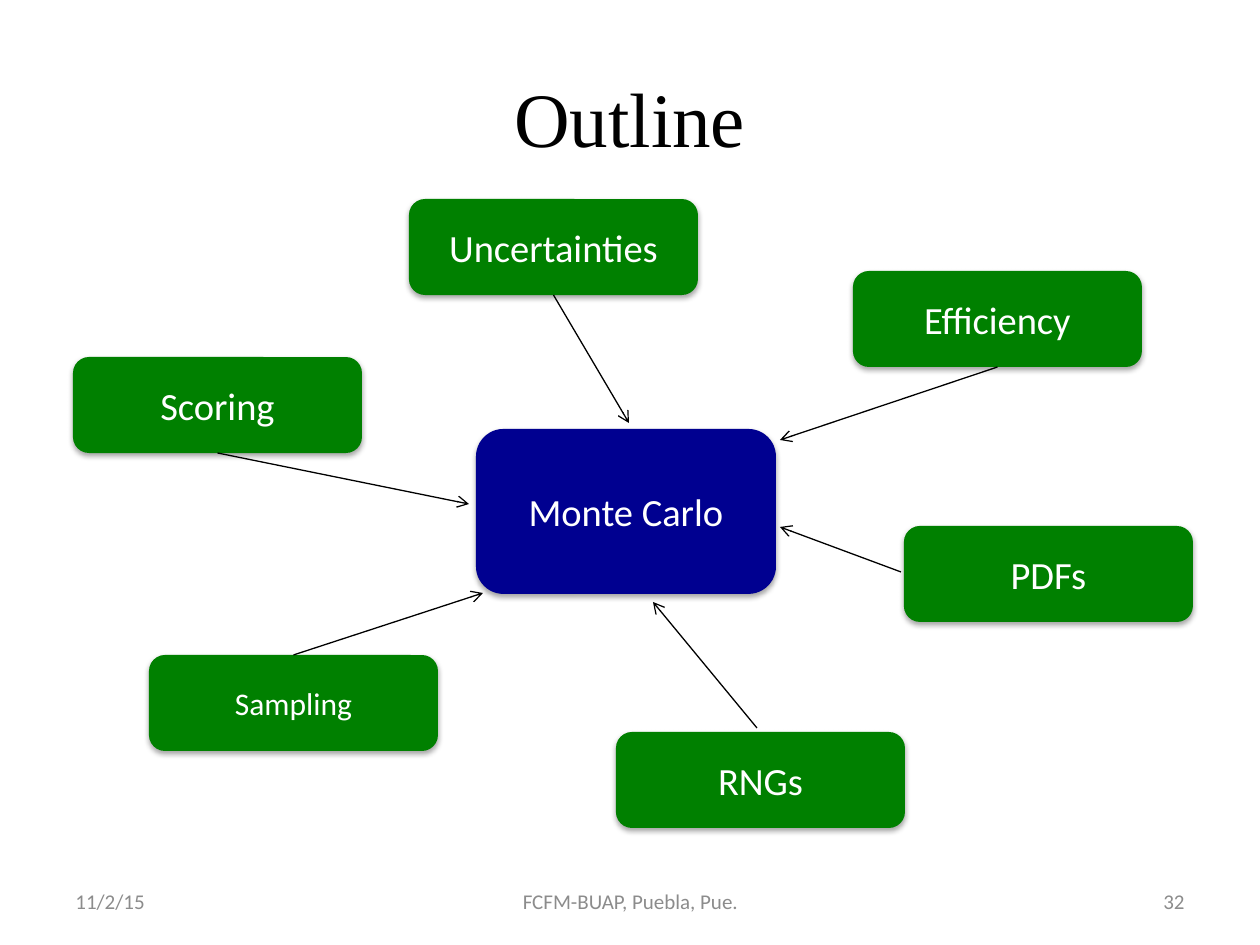
"""Builds the Monte Carlo outline slide."""
from typing import Any, NamedTuple, Optional

from lxml.etree import SubElement
from pptx import Presentation
from pptx.dml.color import RGBColor
from pptx.enum.shapes import MSO_CONNECTOR, MSO_SHAPE
from pptx.enum.text import MSO_ANCHOR, PP_ALIGN
from pptx.oxml.ns import qn
from pptx.util import Emu, Pt

SCALE = 914400 / 126
HUES = {"ink": "000000", "gray": "8C8C8C", "core": "000090",
        "node": "008000", "white": "FFFFFF"}
FRAME = {"word_wrap": True, "vertical_anchor": MSO_ANCHOR.MIDDLE}
SHADE = {"blurRad": Pt(3.1), "dist": Pt(1.8), "dir": 5400000,
         "algn": "ctr", "rotWithShape": 0}
WIDE, HIGH = 289, 96


class Label(NamedTuple):
    text: str
    box: tuple[int, int, int, int]
    size: int
    hue: str
    align: Any
    face: str = "Calibri"


class Node(NamedTuple):
    text: str
    left: int
    top: int
    tip: tuple[int, int]
    site: Optional[int] = None
    start: tuple[int, int] = (0, 0)
    size: int = 22


LABELS = [
    Label("Outline", (63, 38, 1134, 158), 44, "ink", PP_ALIGN.CENTER,
          "Times New Roman"),
    Label("11/2/15", (63, 876, 294, 50), 12, "gray", PP_ALIGN.LEFT),
    Label("FCFM-BUAP, Puebla, Pue.", (431, 876, 399, 50), 12, "gray",
          PP_ALIGN.CENTER),
    Label("32", (903, 876, 294, 50), 12, "gray", PP_ALIGN.RIGHT),
]
CORE = Label("Monte Carlo", (476, 429, 300, 165), 22, "white", PP_ALIGN.CENTER)
NODES = [
    Node("Uncertainties", 409, 199, (629, 423), 2),
    Node("Efficiency", 853, 271, (780, 440), 2),
    Node("PDFs", 904, 526, (780, 527), start=(901, 572)),
    Node("RNGs", 616, 732, (653, 602), start=(757, 728)),
    Node("Sampling", 149, 655, (483, 593), 0, size=18),
    Node("Scoring", 73, 357, (469, 504), 2),
]


def px(*nums: int) -> list[Emu]:
    return [Emu(round(num * SCALE)) for num in nums]


def tint(hue: str) -> RGBColor:
    return RGBColor.from_string(HUES[hue])


def apply(item: Any, form: dict[str, Any]) -> None:
    for key, value in form.items():
        setattr(item, key, value)


def write(shape: Any, label: Label) -> None:
    frame = shape.text_frame
    apply(frame, FRAME)
    para = frame.paragraphs[0]
    para.alignment = label.align
    run = para.add_run()
    run.text = label.text
    apply(run.font, {"name": label.face, "size": Pt(label.size)})
    run.font.color.rgb = tint(label.hue)


def draw_box(slide: Any, label: Label, fill: str) -> Any:
    box = slide.shapes.add_shape(MSO_SHAPE.ROUNDED_RECTANGLE, *px(*label.box))
    box.fill.solid()
    box.fill.fore_color.rgb = tint(fill)
    box.line.fill.background()
    box.shadow.inherit = False
    glow = box.element.spPr.find(qn("a:effectLst"))
    cast = SubElement(glow, qn("a:outerShdw"),
                      {key: str(value) for key, value in SHADE.items()})
    color = SubElement(cast, qn("a:srgbClr"), val=HUES["ink"])
    SubElement(color, qn("a:alpha"), val="35000")
    write(box, label)
    return box


def draw_arrow(slide: Any, node: Node, box: Any) -> None:
    arrow = slide.shapes.add_connector(
        MSO_CONNECTOR.STRAIGHT, *px(*node.start, *node.tip))
    if node.site is not None:
        arrow.begin_connect(box, node.site)
    arrow.line.width = Pt(0.75)
    arrow.line.color.rgb = tint("ink")
    props = arrow.element.spPr
    SubElement(props.find(qn("a:ln")), qn("a:tailEnd"), type="arrow")
    SubElement(props, qn("a:effectLst"))


def main() -> None:
    deck = Presentation()
    apply(deck, dict(zip(("slide_width", "slide_height"), px(1260, 945))))
    slide = deck.slides.add_slide(deck.slide_layouts[6])
    for label in LABELS:
        write(slide.shapes.add_textbox(*px(*label.box)), label)
    draw_box(slide, CORE, "core")
    pairs = []
    for node in NODES:
        label = Label(node.text, (node.left, node.top, WIDE, HIGH),
                      node.size, "white", PP_ALIGN.CENTER)
        pairs.append((node, draw_box(slide, label, "node")))
    for node, box in pairs:
        draw_arrow(slide, node, box)
    deck.save("out.pptx")


if __name__ == "__main__":
    main()
